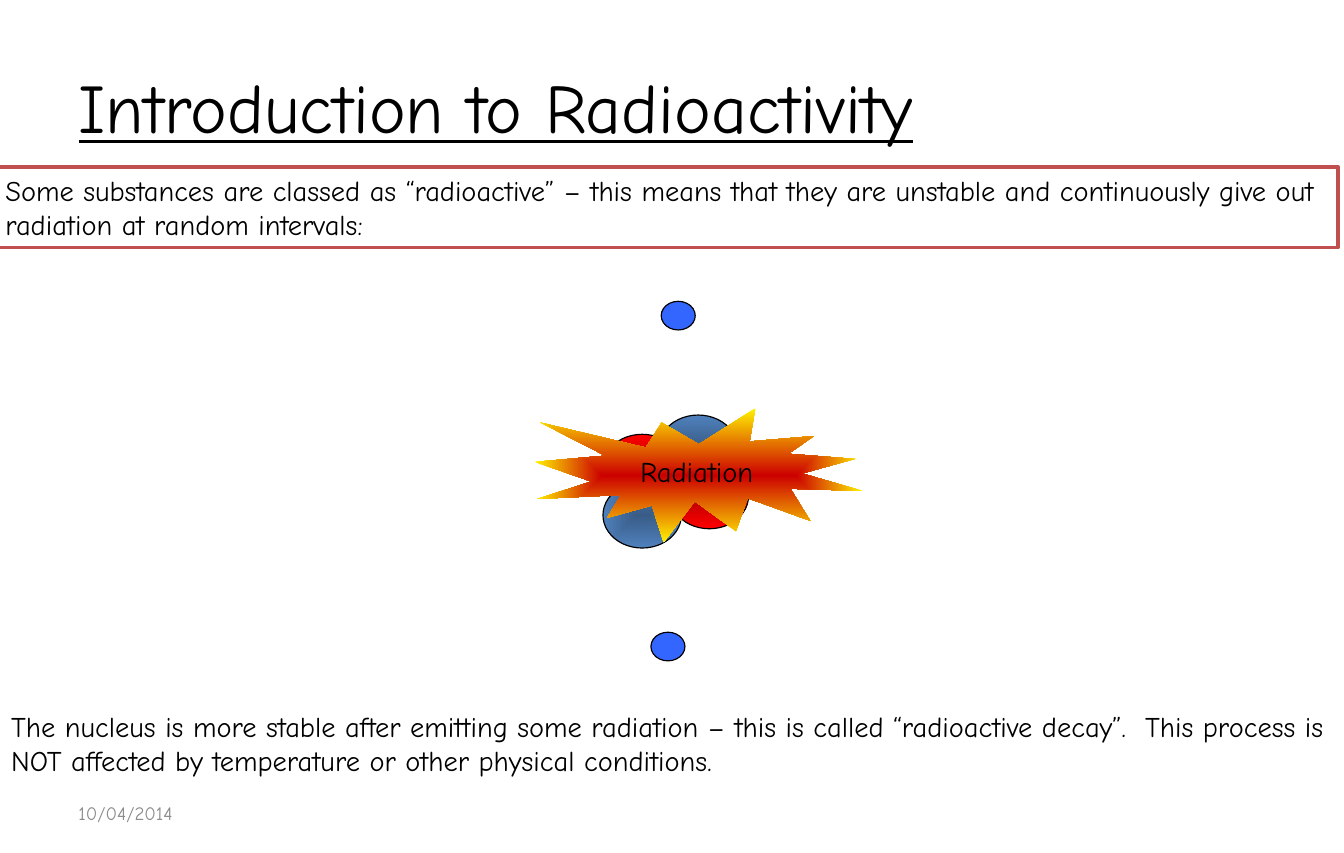
from lxml import etree
from pptx import Presentation
from pptx.dml.color import RGBColor
from pptx.enum.shapes import MSO_SHAPE as SHAPE
from pptx.enum.text import MSO_ANCHOR as ANCHOR, PP_ALIGN as ALIGN
from pptx.oxml import parse_xml
from pptx.oxml.ns import nsdecls, qn
from pptx.util import Cm, Pt

COLORS = {
    "black": "000000", "white": "FFFFFF", "grey": "8C8C8C",
    "border": "C0504D", "electron": "3366FF",
    "neutron_in": "395C87", "neutron_out": "4F81BD",
    "proton_in": "B60000", "proton_out": "FF0000",
    "burst_in": "CC0000", "burst_out": "FFF200",
}
RGB = {name: RGBColor.from_string(value) for name, value in COLORS.items()}


def write(shape, text, size, color="black", anchor=ANCHOR.TOP,
          align=ALIGN.LEFT, wrap=True, underline=None):
    tf = shape.text_frame
    tf.word_wrap = wrap
    tf.vertical_anchor = anchor
    p = tf.paragraphs[0]
    p.alignment = align
    r = p.add_run()
    r.text = text
    font = {"name": "Comic Neue", "size": Pt(size), "underline": underline}
    for key, value in font.items():
        setattr(r.font, key, value)
    r.font.color.rgb = RGB[color]


def add_filled(kind, box, fill, line=None, width=0.75):
    sp = s.shapes.add_shape(kind, *map(Cm, box))
    sp.shadow.inherit = False
    if fill in RGB:
        sp.fill.solid()
        sp.fill.fore_color.rgb = RGB[fill]
    else:
        sp.fill.gradient()
        for stop, end, position in zip(sp.fill.gradient_stops, ("in", "out"), (0, 1)):
            stop.color.rgb = RGB[f"{fill}_{end}"]
            stop.position = position
        grad = sp.fill._xPr.find(qn("a:gradFill"))
        grad.replace(grad.find(qn("a:lin")), parse_xml(
            f'<a:path {nsdecls("a")} path="shape">'
            '<a:fillToRect l="50000" t="50000" r="50000" b="50000"/></a:path>'))
    if line:
        sp.line.color.rgb = RGB[line]
        sp.line.width = Pt(width)
    else:
        sp.line.fill.background()
    return sp


prs = Presentation()
prs.slide_width, prs.slide_height = Cm(30), Cm(19.05)
s = prs.slides.add_slide(prs.slide_layouts[5])

title = s.shapes.title
title_box = {"left": 1.5, "top": 0.76, "width": 27, "height": 3.18}
for key, value in title_box.items():
    setattr(title, key, Cm(value))
write(title, "Introduction to Radioactivity", 44, anchor=ANCHOR.MIDDLE, underline=True)

date = s.shapes.add_textbox(Cm(1.5), Cm(17.65), Cm(7), Cm(1.02))
write(date, "10/04/2014", 12, "grey", ANCHOR.MIDDLE)

nucleus = [
    ("neutron", 14.71, 9.27),
    ("proton", 13.46, 9.7),
    ("proton", 14.96, 10.34),
    ("neutron", 13.46, 10.77),
]
for particle, x, y in nucleus:
    add_filled(SHAPE.OVAL, (x, y, 1.75, 1.47), particle, "black")

for x, y in [(14.53, 14.12), (14.76, 6.73)]:
    add_filled(SHAPE.OVAL, (x, y, 0.76, 0.64), "electron", "black")

intro = add_filled(SHAPE.RECTANGLE, (-0.13, 3.73, 30, 1.8), "white", "border", 2)
write(intro, "Some substances are classed as “radioactive” – this means that they are "
      "unstable and continuously give out radiation at random intervals:", 18)

burst = add_filled(SHAPE.EXPLOSION1, (11.94, 9.12, 7.32, 3), "burst")
write(burst, "Radiation", 18, anchor=ANCHOR.MIDDLE, align=ALIGN.CENTER, wrap=False)

decay = s.shapes.add_textbox(Cm(0), Cm(15.72), Cm(30), Cm(1.8))
write(decay, "The nucleus is more stable after emitting some radiation – this is called "
      "“radioactive decay”.  This process is NOT affected by temperature or other "
      "physical conditions.", 18)

prs.save("out.pptx")
